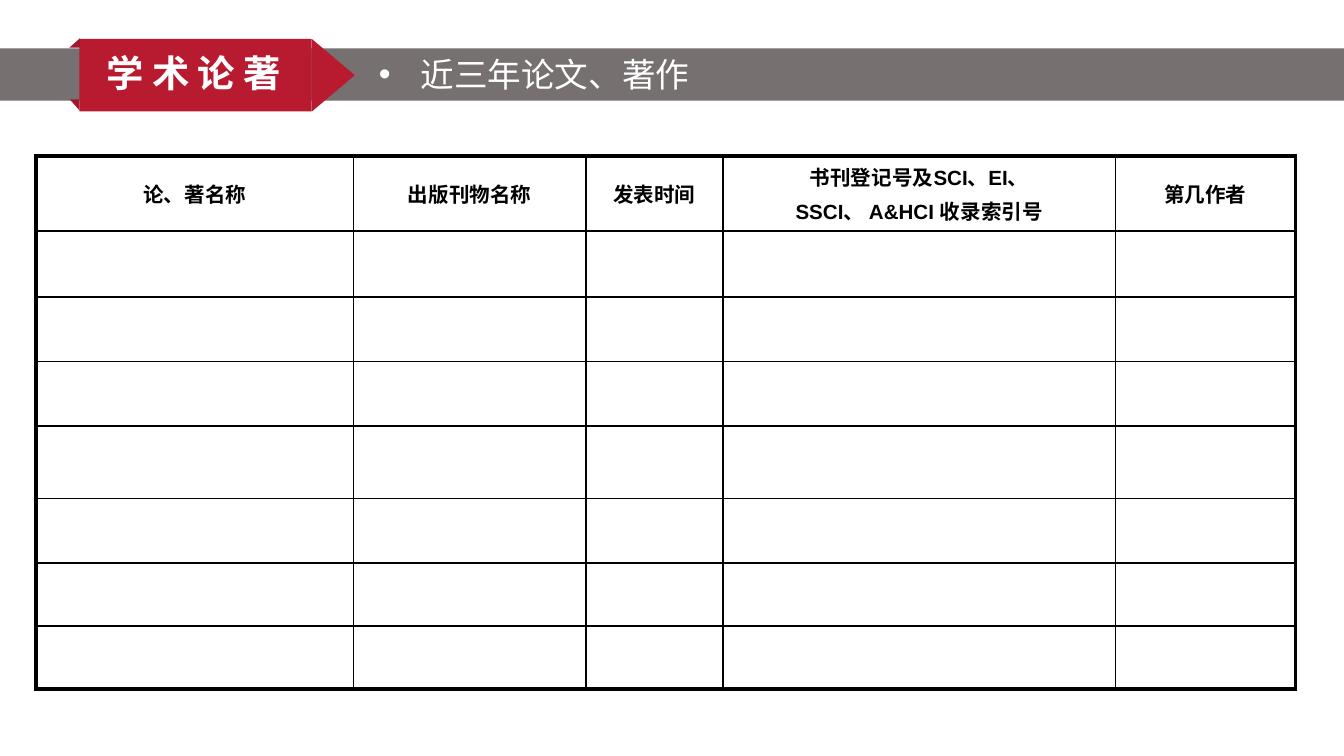
from lxml import etree
from pptx import Presentation
from pptx.dml.color import RGBColor
from pptx.enum.shapes import MSO_SHAPE
from pptx.enum.text import MSO_ANCHOR, PP_ALIGN
from pptx.oxml.ns import qn
from pptx.util import Inches, Pt

RECT, TRIANGLE, FOLD = MSO_SHAPE.RECTANGLE, MSO_SHAPE.ISOSCELES_TRIANGLE, MSO_SHAPE.RIGHT_TRIANGLE
MIDDLE = MSO_ANCHOR.MIDDLE
LEFT, CENTER = PP_ALIGN.LEFT, PP_ALIGN.CENTER

GREY = RGBColor(0x76, 0x70, 0x70)
RED = RGBColor(0xB8, 0x1B, 0x30)
DARK_RED = RGBColor(0xA1, 0x17, 0x2B)
WHITE = RGBColor(0xFF, 0xFF, 0xFF)
BLACK = RGBColor(0, 0, 0)
CJK, LATIN = "Noto Sans CJK SC", "Arial"
THICK, THIN = Pt(2.25), Pt(1)

# Content
TITLE = "学 术 论 著"
SUBTITLE = "近三年论文、著作"
HEADERS = [
    ["论、著名称"],
    ["出版刊物名称"],
    ["发表时间"],
    ["书刊登记号及SCI、EI、", "SSCI、 A&HCI 收录索引号"],
    ["第几作者"],
]
COL_WIDTHS = [2.36, 1.73, 1.02, 2.92, 1.34]
ROW_HEIGHTS = [0.56, 0.49, 0.48, 0.48, 0.54, 0.48, 0.47, 0.47]

# Banner parts: shape, left, top, width, height, rotation, colour
BANNER = [
    (RECT, 0, 0.36, 10, 0.39, 0, GREY),
    (RECT, 0.59, 0.29, 1.73, 0.54, 0, RED),
    (FOLD, 0.52, 0.28, 0.07, 0.08, 270, DARK_RED),
    (FOLD, 0.52, 0.74, 0.07, 0.08, 180, DARK_RED),
    (TRIANGLE, 2.21, 0.4, 0.54, 0.32, 90, RED),
]


def add_text(p, text, size, color, bold=False, font=CJK):
    r = p.add_run()
    r.text = text
    r.font.size, r.font.bold, r.font.name = Pt(size), bold, font
    r.font.color.rgb = color
    etree.SubElement(r.font._element, qn("a:ea"), typeface=CJK)


def add_border(cell, side, width):
    ln = etree.SubElement(cell._tc.get_or_add_tcPr(), qn(f"a:ln{side}"), w=str(width))
    fill = etree.SubElement(ln, qn("a:solidFill"))
    etree.SubElement(fill, qn("a:srgbClr"), val=str(BLACK))


# 16:9 slide
prs = Presentation()
prs.slide_width = Inches(10)
prs.slide_height = prs.slide_width * 9 // 16
s = prs.slides.add_slide(prs.slide_layouts[5])

# Banner, placed behind the title
title = s.shapes.title
for kind, x, y, w, h, rotation, color in BANNER:
    sp = s.shapes.add_shape(kind, Inches(x), Inches(y), Inches(w), Inches(h))
    sp.rotation = rotation
    sp.shadow.inherit = False
    sp.fill.solid()
    sp.fill.fore_color.rgb = color
    sp.line.fill.background()
    title._element.addprevious(sp._element)

# Title
title.left, title.top, title.width, title.height = map(Inches, (0.69, 0.32, 1.71, 0.44))
tf = title.text_frame
tf.vertical_anchor, tf.word_wrap = MIDDLE, True
p = tf.paragraphs[0]
p.alignment = LEFT
add_text(p, TITLE, 20, WHITE, bold=True)

# Bulleted subtitle
tf = s.shapes.add_textbox(Inches(2.72), Inches(0.35), Inches(3.78), Inches(0.4)).text_frame
tf.vertical_anchor, tf.word_wrap = MIDDLE, True
p = tf.paragraphs[0]
pPr = p._p.get_or_add_pPr()
indent = Inches(0.31)
pPr.set("marL", str(indent))
pPr.set("indent", str(-indent))
etree.SubElement(pPr, qn("a:buFont"), typeface=LATIN)
etree.SubElement(pPr, qn("a:buChar"), char="•")
add_text(p, SUBTITLE, 18, WHITE)

# Publications table
n_rows, n_cols = len(ROW_HEIGHTS), len(COL_WIDTHS)
table = s.shapes.add_table(n_rows, n_cols, Inches(0.27), Inches(1.16),
                           Inches(sum(COL_WIDTHS)), Inches(sum(ROW_HEIGHTS))).table
for col, width in zip(table.columns, COL_WIDTHS):
    col.width = Inches(width)
for row, height in zip(table.rows, ROW_HEIGHTS):
    row.height = Inches(height)

for i in range(n_rows):
    for j in range(n_cols):
        cell = table.cell(i, j)
        outer = {"L": j == 0, "R": j == n_cols - 1, "T": i == 0, "B": i == n_rows - 1}
        for side, is_outer in outer.items():
            add_border(cell, side, THICK if is_outer else THIN)
        cell.fill.background()

# Header texts
for cell, lines in zip(table.rows[0].cells, HEADERS):
    cell.vertical_anchor = MIDDLE
    cell.margin_top = cell.margin_bottom = Inches(0.04)
    tf = cell.text_frame
    for k, line in enumerate(lines):
        p = tf.add_paragraph() if k else tf.paragraphs[0]
        p.alignment = CENTER
        if k:
            p.space_before = Pt(2)
        add_text(p, line, 11, BLACK, bold=True, font=LATIN)

prs.save("out.pptx")
